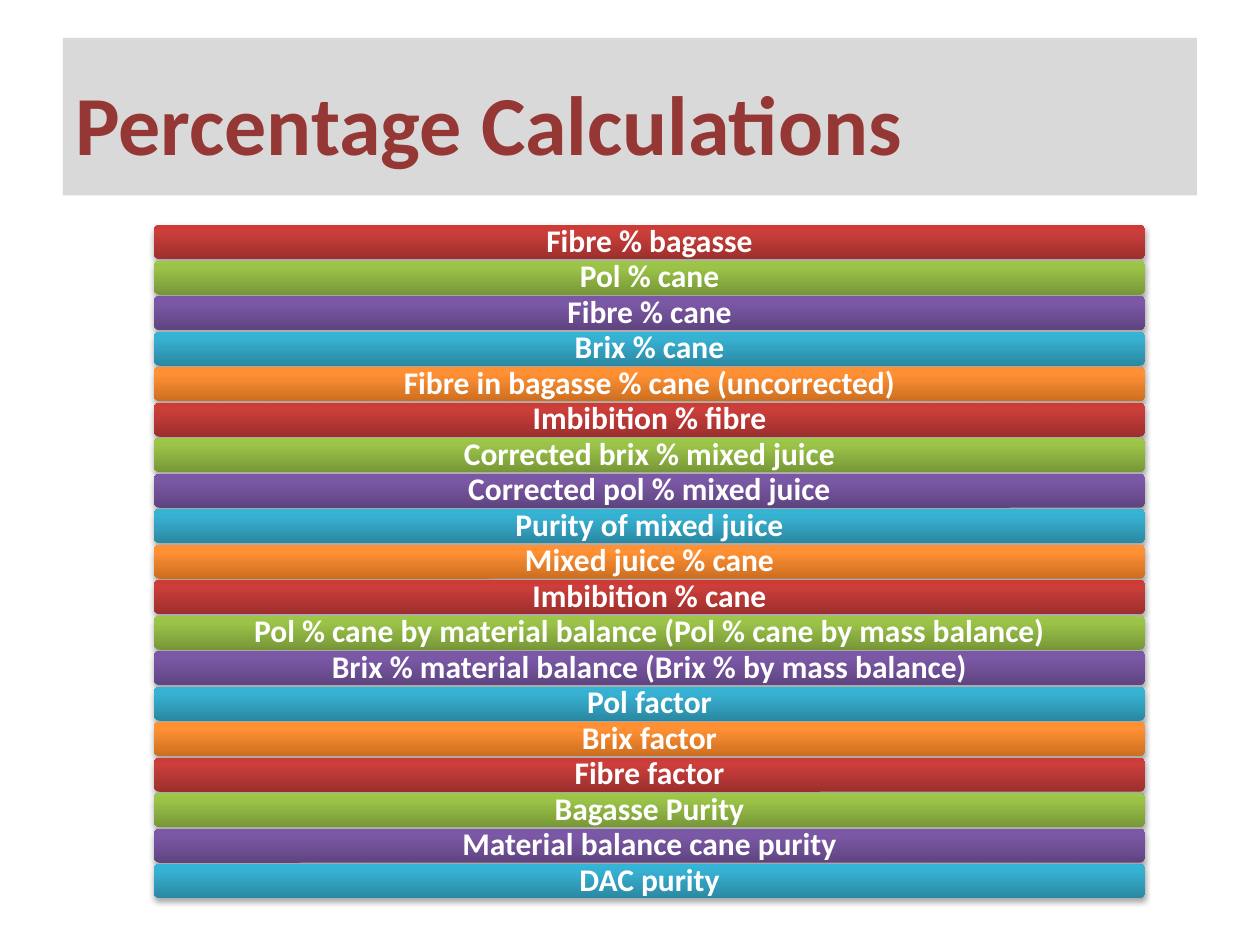
from copy import deepcopy

from lxml import etree
from pptx import Presentation
from pptx.dml.color import RGBColor
from pptx.enum import shapes, text
from pptx.oxml import ns
from pptx.util import Pt

FONT = "Calibri"
WHITE = RGBColor(0xFF, 0xFF, 0xFF)
BANNER_GREY = RGBColor(0xD9, 0xD9, 0xD9)
TITLE_RED = RGBColor(0x95, 0x37, 0x35)

# Bar gradients, from bottom to top
STOP_POSITIONS = (0, 0.8, 1)
RED = (RGBColor(0x9C, 0x2F, 0x2D), RGBColor(0xCB, 0x3E, 0x3A), RGBColor(0xCE, 0x3B, 0x37))
GREEN = (RGBColor(0x77, 0x97, 0x37), RGBColor(0x9B, 0xC3, 0x48), RGBColor(0x9D, 0xC7, 0x46))
PURPLE = (RGBColor(0x5F, 0x44, 0x80), RGBColor(0x7B, 0x58, 0xA6), RGBColor(0x7C, 0x57, 0xA8))
BLUE = (RGBColor(0x2A, 0x88, 0xA2), RGBColor(0x37, 0xB1, 0xD2), RGBColor(0x34, 0xB4, 0xD6))
ORANGE = (RGBColor(0xCC, 0x6E, 0x20), RGBColor(0xFF, 0x90, 0x34), RGBColor(0xFF, 0x91, 0x36))
BAR_COLOURS = (RED, GREEN, PURPLE, BLUE, ORANGE)

CALCULATIONS = (
    "Fibre % bagasse",
    "Pol % cane",
    "Fibre % cane",
    "Brix % cane",
    "Fibre in bagasse % cane (uncorrected)",
    "Imbibition % fibre",
    "Corrected brix % mixed juice",
    "Corrected pol % mixed juice",
    "Purity of mixed juice",
    "Mixed juice % cane",
    "Imbibition % cane",
    "Pol % cane by material balance (Pol % cane by mass balance)",
    "Brix % material balance (Brix % by mass balance)",
    "Pol factor",
    "Brix factor",
    "Fibre factor",
    "Bagasse Purity",
    "Material balance cane purity",
    "DAC purity",
)


def fill_gradient(shape, colours):
    """Fill a shape with a vertical three-stop gradient."""
    shape.fill.gradient()
    shape.fill.gradient_angle = 90
    stop_list = shape._element.spPr.find(".//" + ns.qn("a:gsLst"))
    stop_list.append(deepcopy(stop_list[-1]))
    for stop, position, colour in zip(shape.fill.gradient_stops, STOP_POSITIONS, colours):
        stop.position = position
        stop.color.rgb = colour


def add_soft_shadow(shape):
    """Give a shape a faint shadow straight below it."""
    shape.shadow.inherit = False
    effects = shape._element.spPr.find(ns.qn("a:effectLst"))
    shadow = etree.SubElement(effects, ns.qn("a:outerShdw"), blurRad=str(Pt(3.1)),
                              dist=str(Pt(1.8)), dir="5400000", rotWithShape="0")
    colour = etree.SubElement(shadow, ns.qn("a:srgbClr"), val="000000")
    etree.SubElement(colour, ns.qn("a:alpha"), val="35000")


def write_text(shape, words, size, colour, alignment):
    """Write one bold, vertically centred paragraph."""
    frame = shape.text_frame
    frame.word_wrap = True
    frame.vertical_anchor = text.MSO_ANCHOR.MIDDLE
    para = frame.paragraphs[0]
    para.text = words
    para.alignment = alignment
    para.font.name = FONT
    para.font.size = Pt(size)
    para.font.bold = True
    para.font.color.rgb = colour
    return frame


def add_title(page, left, top, width, height):
    banner = page.shapes.add_shape(shapes.MSO_SHAPE.RECTANGLE,
                                   Pt(left), Pt(top), Pt(width), Pt(height))
    banner.shadow.inherit = False
    banner.fill.solid()
    banner.fill.fore_color.rgb = BANNER_GREY
    banner.line.fill.background()
    frame = write_text(banner, "Percentage Calculations", 48, TITLE_RED, text.PP_ALIGN.LEFT)
    frame.margin_top = Pt(9.4)


def add_bars(page, left, top, width, height):
    """Stack one bar per calculation, filling the given box."""
    gap = 0.8
    pitch = (height + gap) / len(CALCULATIONS)
    for index, words in enumerate(CALCULATIONS):
        bar = page.shapes.add_shape(shapes.MSO_SHAPE.ROUNDED_RECTANGLE, Pt(left),
                                    Pt(top + index * pitch), Pt(width), Pt(pitch - gap))
        fill_gradient(bar, BAR_COLOURS[index % len(BAR_COLOURS)])
        bar.line.fill.background()
        add_soft_shadow(bar)
        frame = write_text(bar, words, 18, WHITE, text.PP_ALIGN.CENTER)
        frame.margin_top = frame.margin_bottom = 0
        frame.paragraphs[0].line_spacing = 0.9


def main():
    deck = Presentation()
    deck.slide_width, deck.slide_height = Pt(720), Pt(540)
    page = deck.slides.add_slide(deck.slide_layouts[6])
    add_title(page, 36, 21.6, 648, 90)
    add_bars(page, 87.9, 128.7, 566.6, 384.6)
    deck.save("out.pptx")


if __name__ == "__main__":
    main()
